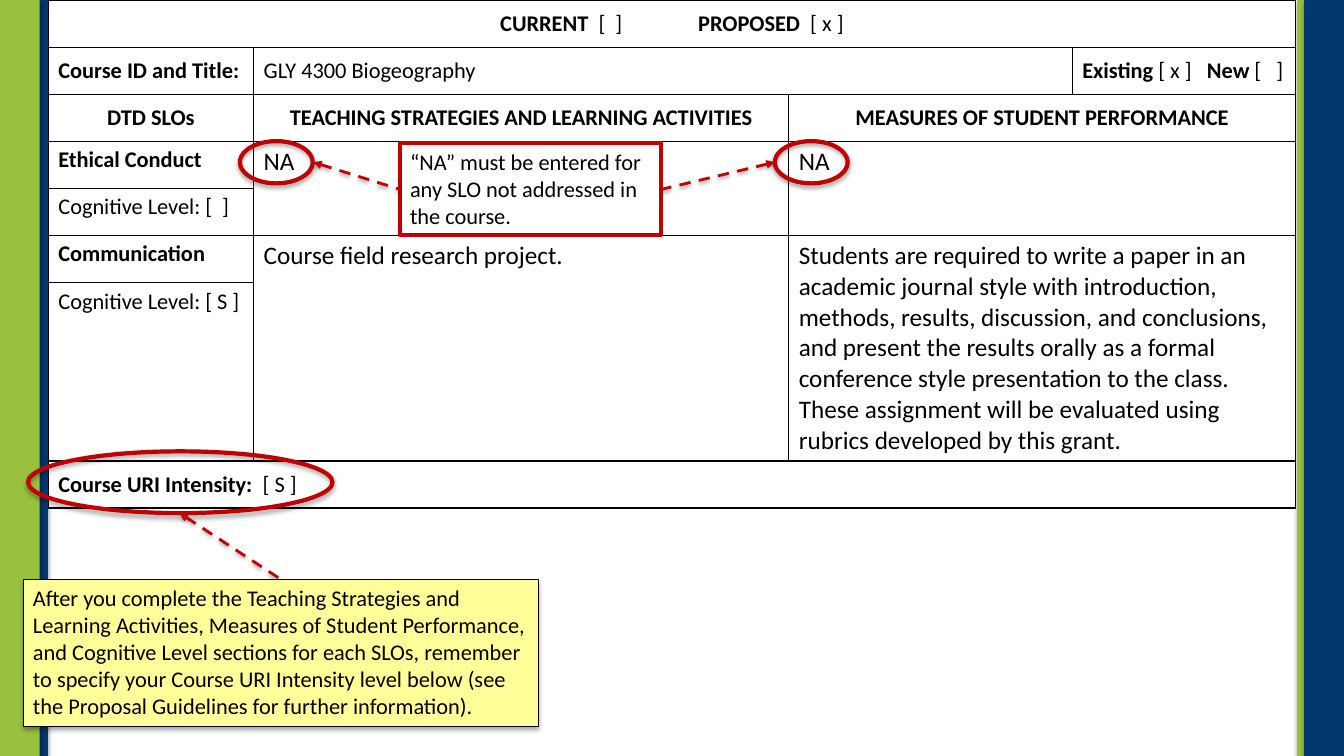
import pptx
import pptx.util
import pptx.dml.color
import pptx.enum.dml
import pptx.enum.shapes
import pptx.enum.text
import pptx.oxml
import pptx.oxml.ns

Pt = pptx.util.Pt
RGBColor = pptx.dml.color.RGBColor
Shape = pptx.enum.shapes.MSO_SHAPE
Align = pptx.enum.text.PP_ALIGN
Anchor = pptx.enum.text.MSO_ANCHOR

NAVY = RGBColor(0x02, 0x38, 0x70)
GREEN = RGBColor(0x98, 0xC1, 0x3E)
RED = RGBColor(0xC0, 0x00, 0x00)
YELLOW = RGBColor(0xFF, 0xFF, 0x99)
WHITE = RGBColor(0xFF, 0xFF, 0xFF)
BLACK = RGBColor(0x00, 0x00, 0x00)
FONT = "Calibri"

# Content: (row, column, row span, column span, alignment, anchor, size, runs)
# Each run is (text, bold) or (text, bold, letter spacing in points)
LEFT, CENTER = Align.LEFT, Align.CENTER
TOP, MIDDLE = Anchor.TOP, Anchor.MIDDLE
CELLS = [
    (0, 0, 1, 4, CENTER, MIDDLE, 16, [
        ("CURRENT  ", True), ("[  ]", False), (" ", True, 50.6),
        ("PROPOSED  ", True), ("[ x ]", False)]),
    (1, 0, 1, 1, LEFT, MIDDLE, 16, [("Course ID and Title:", True)]),
    (1, 1, 1, 2, LEFT, MIDDLE, 16, [("GLY 4300 Biogeography", False)]),
    (1, 3, 1, 1, LEFT, MIDDLE, 16, [
        ("Existing ", True), ("[ x ]", False), (" ", False, 7.2),
        ("New ", True), ("[   ]", False)]),
    (2, 0, 1, 1, CENTER, MIDDLE, 16, [("DTD SLOs", True)]),
    (2, 1, 1, 1, CENTER, MIDDLE, 16,
     [("TEACHING STRATEGIES AND LEARNING ACTIVITIES", True)]),
    (2, 2, 1, 2, CENTER, MIDDLE, 16, [("MEASURES OF STUDENT PERFORMANCE", True)]),
    (3, 0, 1, 1, LEFT, TOP, 16, [("Ethical Conduct", True)]),
    (3, 1, 2, 1, LEFT, TOP, 18, [("NA", False)]),
    (3, 2, 2, 2, LEFT, TOP, 18, [("NA", False)]),
    (4, 0, 1, 1, LEFT, TOP, 16, [("Cognitive Level: [  ]", False)]),
    (5, 0, 1, 1, LEFT, TOP, 16, [("Communication", True)]),
    (5, 1, 2, 1, LEFT, TOP, 18, [("Course field research project.", False)]),
    (5, 2, 2, 2, LEFT, TOP, 18, [(
        "Students are required to write a paper in an academic journal style with "
        "introduction, methods, results, discussion, and conclusions, and present "
        "the results orally as a formal conference style presentation to the class. "
        "These assignment will be evaluated using rubrics developed by this grant.",
        False)]),
    (6, 0, 1, 1, LEFT, TOP, 16, [("Cognitive Level: [ S ]", False)]),
    (7, 0, 1, 4, LEFT, MIDDLE, 16, [("Course URI Intensity:", True), ("  [ S ]", False)]),
]
INTENSITY_NOTE = (
    "After you complete the Teaching Strategies and Learning Activities, Measures of "
    "Student Performance, and Cognitive Level sections for each SLOs, remember to "
    "specify your Course URI Intensity level below (see the Proposal Guidelines for "
    "further information).")
NA_NOTE = "“NA” must be entered for any SLO not addressed in the course."

# Geometry in points
SLIDE_WIDTH, SLIDE_HEIGHT = 960, 540
BAR_WIDTH = 28.4
BARS = [(5.8, NAVY), (926.6, GREEN), (0, GREEN), (SLIDE_WIDTH - BAR_WIDTH, NAVY)]
TABLE_LEFT = 34.5
COLUMN_WIDTHS = [146.7, 382.2, 202.5, 159.6]
ROW_HEIGHTS = [33.66] * 6 + [127.1, 33.66]
INTENSITY_OVAL = (20, 322.4, 217.5, 44.1)
NA_OVALS = [(left, 100.8, 52, 30.2) for left in (171.4, 553.5)]
INTENSITY_BOX = (16.5, 414, 368, 104.5)
NA_BOX = (285.8, 102.2, 186.5, 65.5)
NA_ARROWS = [((223.7, 115.9), (285.8, 135.3)), ((553.5, 115.9), (472.3, 135.3))]
INTENSITY_ARROW = ((128.3, 366.5), (200.9, 414))

# Shadows: opacity percent, blur, distance
SHAPE_SHADOW = (35, 3.1, 1.8)
LINE_SHADOW = (38, 3.1, 1.6)
NOTE_SHADOW = (32, 3.5, 2.2)

presentation = pptx.Presentation()
presentation.slide_width = Pt(SLIDE_WIDTH)
presentation.slide_height = Pt(SLIDE_HEIGHT)
slide = presentation.slides.add_slide(presentation.slide_layouts[6])


def xml(markup):
    namespace = pptx.oxml.ns.nsdecls("a")
    return pptx.oxml.parse_xml(markup.replace(" ", f" {namespace} ", 1))


def add_shadow(shape, shadow):
    opacity, blur, distance = shadow
    properties = shape._element.spPr
    for effects in properties.findall(pptx.oxml.ns.qn("a:effectLst")):
        properties.remove(effects)
    properties.append(xml(
        f'<a:effectLst ><a:outerShdw blurRad="{Pt(blur)}" dist="{Pt(distance)}" '
        f'dir="5400000" rotWithShape="0"><a:srgbClr val="000000">'
        f'<a:alpha val="{opacity * 1000}"/></a:srgbClr></a:outerShdw></a:effectLst>'))


def add_box(kind, box, fill=None, line=None, line_width=3, shadow=None):
    shape = slide.shapes.add_shape(kind, *map(Pt, box))
    shape.shadow.inherit = False
    if fill is None:
        shape.fill.background()
    else:
        shape.fill.solid()
        shape.fill.fore_color.rgb = fill
    if line is None:
        shape.line.fill.background()
    else:
        shape.line.color.rgb = line
        shape.line.width = Pt(line_width)
    if shadow:
        add_shadow(shape, shadow)
    return shape


def add_runs(paragraph, runs, size, alignment=LEFT):
    paragraph.alignment = alignment
    for text, bold, *spacing in runs:
        run = paragraph.add_run()
        run.text = text
        run.font.name = FONT
        run.font.size = Pt(size)
        run.font.bold = bold
        run.font.color.rgb = BLACK
        if spacing:
            run.font._element.set("spc", str(round(spacing[0] * 100)))


def add_note(box, text, fill, line, line_width, shadow=None):
    shape = add_box(Shape.RECTANGLE, box, fill, line, line_width, shadow)
    frame = shape.text_frame
    frame.word_wrap = True
    frame.auto_size = pptx.enum.text.MSO_AUTO_SIZE.SHAPE_TO_FIT_TEXT
    frame.vertical_anchor = TOP
    add_runs(frame.paragraphs[0], [(text, False)], 16)


def add_arrow(tip, tail):
    connector = slide.shapes.add_connector(
        pptx.enum.shapes.MSO_CONNECTOR.STRAIGHT, *map(Pt, tip + tail))
    connector.line.color.rgb = RED
    connector.line.width = Pt(2)
    connector.line.dash_style = pptx.enum.dml.MSO_LINE.DASH
    connector.line._get_or_add_ln().append(xml('<a:headEnd type="triangle"/>'))
    add_shadow(connector, LINE_SHADOW)


def add_borders(cell):
    properties = cell._tc.get_or_add_tcPr()
    for side in ("lnL", "lnR", "lnT", "lnB"):
        properties.append(xml(
            f'<a:{side} w="{Pt(1)}"><a:solidFill><a:srgbClr val="{BLACK}"/>'
            f'</a:solidFill></a:{side}>'))


# Side bars
for left, color in BARS:
    add_box(Shape.RECTANGLE, (left, 0, BAR_WIDTH, SLIDE_HEIGHT), color,
            shadow=SHAPE_SHADOW)

# Course form table
table = slide.shapes.add_table(
    len(ROW_HEIGHTS), len(COLUMN_WIDTHS), Pt(TABLE_LEFT), Pt(0),
    Pt(sum(COLUMN_WIDTHS)), Pt(sum(ROW_HEIGHTS))).table
table.first_row = table.horz_banding = False
for column, width in zip(table.columns, COLUMN_WIDTHS):
    column.width = Pt(width)
for row, height in zip(table.rows, ROW_HEIGHTS):
    row.height = Pt(height)
for cell in table.iter_cells():
    add_borders(cell)
    cell.fill.solid()
    cell.fill.fore_color.rgb = WHITE
for row, column, row_span, column_span, alignment, anchor, size, runs in CELLS:
    cell = table.cell(row, column)
    if row_span * column_span > 1:
        cell.merge(table.cell(row + row_span - 1, column + column_span - 1))
    cell.vertical_anchor = anchor
    add_runs(cell.text_frame.paragraphs[0], runs, size, alignment)

# Course intensity callout
add_box(Shape.OVAL, INTENSITY_OVAL, line=RED, shadow=SHAPE_SHADOW)
add_arrow(*INTENSITY_ARROW)
add_note(INTENSITY_BOX, INTENSITY_NOTE, YELLOW, BLACK, 0.25, NOTE_SHADOW)

# "NA" callout
for oval in NA_OVALS:
    add_box(Shape.OVAL, oval, line=RED, shadow=SHAPE_SHADOW)
add_note(NA_BOX, NA_NOTE, WHITE, RED, 3)
for tip, tail in NA_ARROWS:
    add_arrow(tip, tail)

presentation.save("out.pptx")
